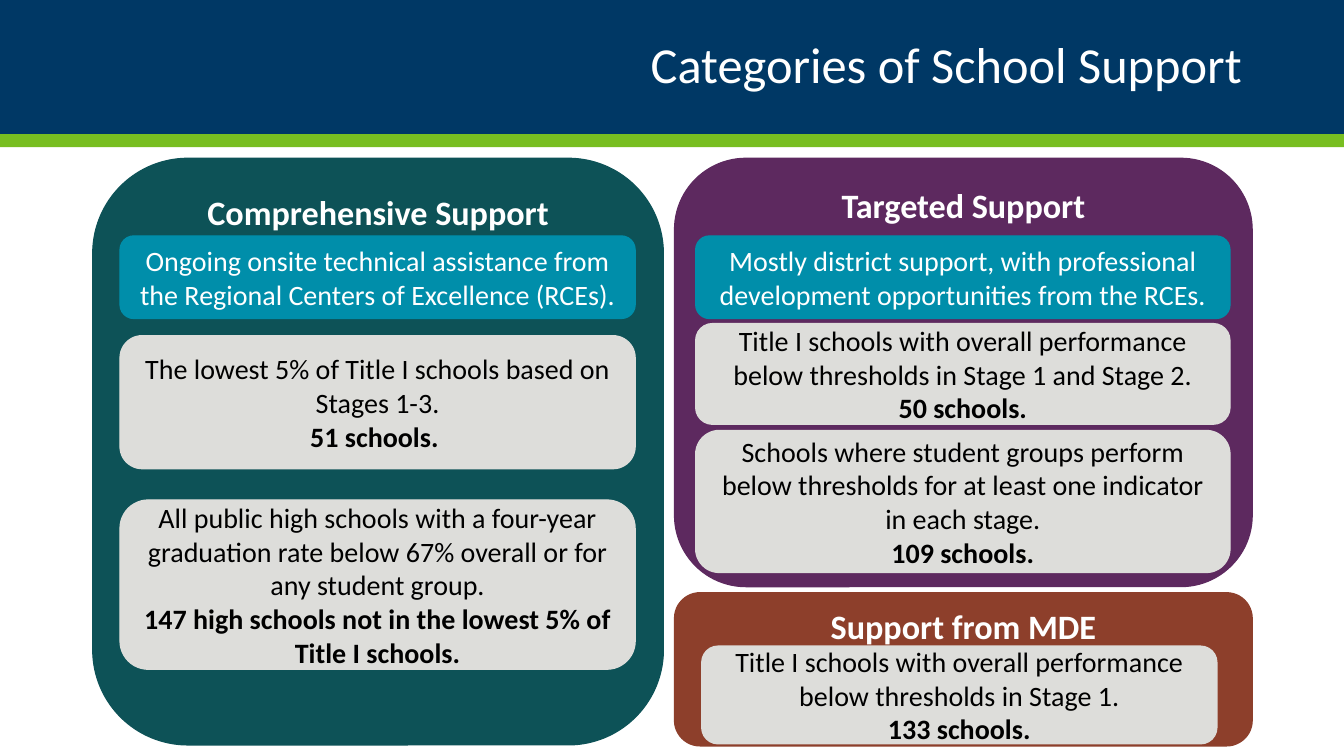
"""Build the slide on categories of school support."""
from dataclasses import dataclass

from pptx import Presentation
from pptx.dml.color import RGBColor
from pptx.enum.shapes import MSO_SHAPE as Shape
from pptx.enum.text import MSO_ANCHOR as Anchor, MSO_AUTO_SIZE as Fit, PP_ALIGN as Align
from pptx.util import Emu, Pt

SCALE = 9144
WIDE, HIGH = 1333, 750
FONT = "Calibri"
WHITE, BLACK, GREY, AQUA = "FFFFFF", "000000", "DDDDDA", "008EAA"
NAVY, LIME, TEAL, PLUM, RUST = "003865", "78BE21", "0D5257", "5D295F", "8D3F2B"


@dataclass(frozen=True)
class Box:
    """A filled box inside a panel, with an optional bold count."""
    top: int
    high: int
    text: str
    count: str = ""


@dataclass(frozen=True)
class Panel:
    """A coloured panel with a heading and a column of boxes."""
    left: int
    top: int
    wide: int
    high: int
    fill: str
    head: str
    inner: int
    span: int
    boxes: tuple[Box, ...]


PANELS = (
    Panel(92, 157, 566, 582, TEAL, "Comprehensive Support", 119, 511, (
        Box(234, 82, "Ongoing onsite technical assistance from the Regional "
                     "Centers of Excellence (RCEs)."),
        Box(333, 132, "The lowest 5% of Title I schools based on Stages 1-3.",
            "51 schools. "),
        Box(496, 168, "All public high schools with a four-year graduation rate "
                      "below 67% overall or for any student group.",
            "147 high schools not in the lowest 5% of Title I schools."),
    )),
    Panel(669, 157, 573, 425, PLUM, "Targeted Support", 690, 530, (
        Box(234, 82, "Mostly district support, with professional development "
                     "opportunities from the RCEs."),
        Box(321, 100, "Title I schools with overall performance below "
                      "thresholds in Stage 1 and Stage 2.", "50 schools."),
        Box(427, 141, "Schools where student groups perform below thresholds "
                      "for at least one indicator in each stage.", "109 schools."),
    )),
    Panel(669, 588, 573, 152, RUST, "Support from MDE", 696, 511, (
        Box(641, 97, "Title I schools with overall performance below "
                     "thresholds in Stage 1.", "133 schools."),
    )),
)


def px(size: int) -> Emu:
    """Turn px into EMU."""
    return Emu(size * SCALE)


def tint(part, hue: str) -> None:
    """Give a fill a solid colour."""
    part.solid()
    part.fore_color.rgb = RGBColor.from_string(hue)


def style(line, size: float, hue: str, bold: bool, align: Align) -> None:
    """Format a paragraph and its runs."""
    line.alignment = align
    for run in line.runs:
        run.font.name, run.font.size, run.font.bold = FONT, Pt(size), bold
        tint(run.font.fill, hue)


def block(slide, kind: Shape, left: int, top: int, wide: int, high: int, hue: str):
    """Draw a plain filled shape."""
    shape = slide.shapes.add_shape(kind, px(left), px(top), px(wide), px(high))
    shape.shadow.inherit = False
    tint(shape.fill, hue)
    if kind == Shape.RECTANGLE:
        shape.line.fill.background()
    else:
        tint(shape.line.fill, hue)
        shape.line.width = Pt(0.85)
    return shape


def draw_box(slide, box: Box, left: int, wide: int) -> None:
    """Draw one box with its text and count."""
    fill, ink = (GREY, BLACK) if box.count else (AQUA, WHITE)
    shape = block(slide, Shape.ROUNDED_RECTANGLE, left, box.top, wide, box.high, fill)
    frame = shape.text_frame
    frame.word_wrap, frame.vertical_anchor = True, Anchor.MIDDLE
    frame.text = "\n".join(filter(None, (box.text, box.count)))
    for rank, line in enumerate(frame.paragraphs):
        style(line, 20, ink, rank > 0, Align.CENTER)


def draw_panel(slide, panel: Panel) -> None:
    """Draw a panel, its heading and its boxes."""
    shape = block(slide, Shape.ROUNDED_RECTANGLE, panel.left, panel.top,
                  panel.wide, panel.high, panel.fill)
    frame = shape.text_frame
    frame.word_wrap, frame.vertical_anchor = True, Anchor.TOP
    frame.text = panel.head
    style(frame.paragraphs[0], 24.4, WHITE, True, Align.CENTER)
    for box in panel.boxes:
        draw_box(slide, box, panel.inner, panel.span)


def draw_title(slide, text: str) -> None:
    """Place and format the title above the bands."""
    title = slide.shapes.title
    title.left, title.top, title.width, title.height = map(px, (92, 17, 1150, 100))
    frame = title.text_frame
    frame.text = text
    frame.word_wrap, frame.auto_size = True, Fit.NONE
    frame.vertical_anchor = Anchor.MIDDLE
    frame.paragraphs[0].line_spacing = 0.9
    style(frame.paragraphs[0], 36, WHITE, False, Align.RIGHT)
    slide.shapes._spTree.append(title._element)


def main() -> None:
    """Build and save the deck."""
    deck = Presentation()
    deck.slide_width, deck.slide_height = px(WIDE), px(HIGH)
    slide = deck.slides.add_slide(deck.slide_layouts.get_by_name("Title Only"))
    block(slide, Shape.RECTANGLE, 0, 0, WIDE, 133, NAVY)
    block(slide, Shape.RECTANGLE, 0, 133, WIDE, 13, LIME)
    for panel in PANELS:
        draw_panel(slide, panel)
    draw_title(slide, "Categories of School Support")
    deck.save("out.pptx")


if __name__ == "__main__":
    main()
